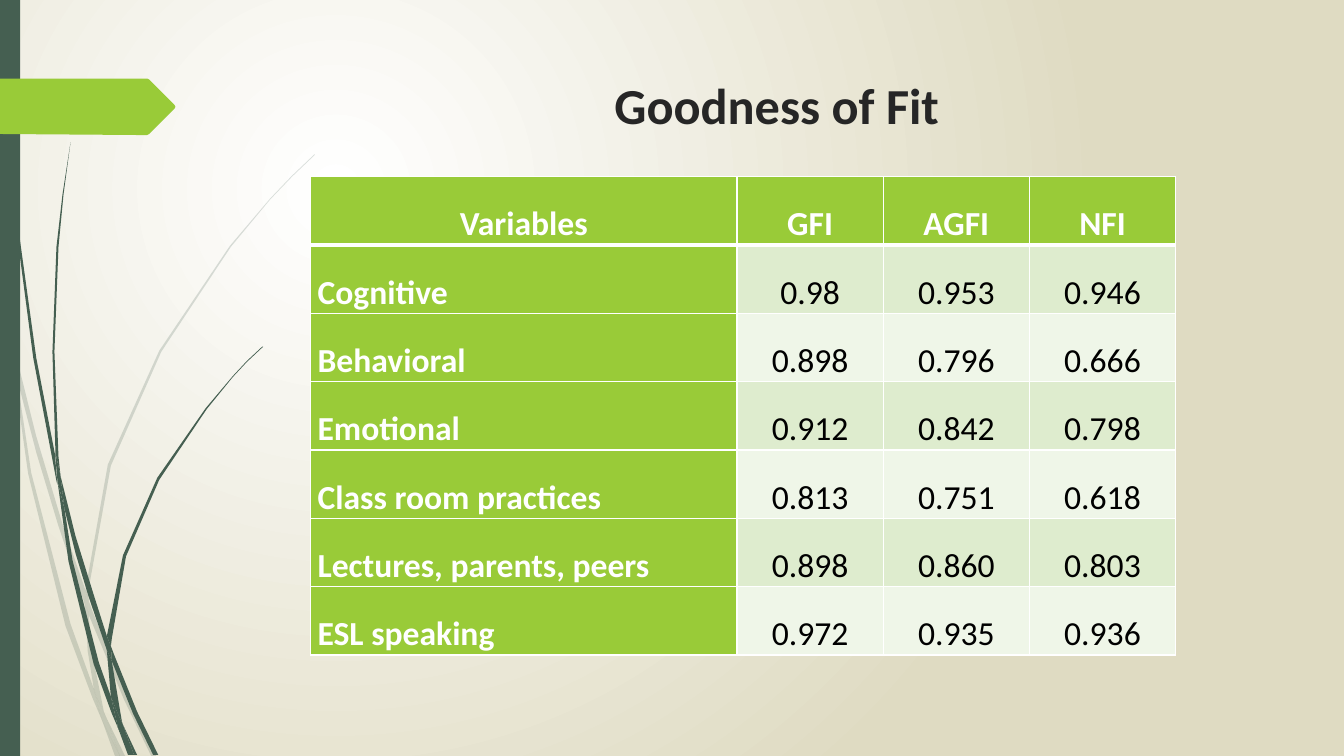
import pptx
import pptx.dml.color
import pptx.enum.shapes
import pptx.enum.text
import pptx.oxml.ns
import pptx.util
from lxml import etree
from pptx.util import Inches

FONT = "Calibri"
GREEN, DARK, WHITE, BLACK = "99CB38", "455F51", "FFFFFF", "000000"
BANDS = ("DEECCE", "EFF6E8")
TITLE = "Goodness of Fit"
HEAD = ("Variables", "GFI", "AGFI", "NFI")
ROWS = [
    ("Cognitive", "0.98", "0.953", "0.946"),
    ("Behavioral", "0.898", "0.796", "0.666"),
    ("Emotional", "0.912", "0.842", "0.798"),
    ("Class room practices", "0.813", "0.751", "0.618"),
    ("Lectures, parents, peers", "0.898", "0.860", "0.803"),
    ("ESL speaking", "0.972", "0.935", "0.936"),
]
WIDTHS = (4.23, 1.45, 1.45, 1.45)
TABLE_H = 4.75

ARROW = [(0, 0.78), (1.46, 0.78), (1.48, 0.79), (1.73, 1.04), (1.74, 1.06),
         (1.73, 1.08), (1.48, 1.33), (1.46, 1.34), (1.36, 1.34), (0, 1.33)]

# Outlines of the blades of grass, in inches
PALE = [
    [(0.58, 5.22), (0.84, 5.99), (0.85, 5.86), (0.62, 5.2), (0.36, 4.33),
     (0.14, 3.45), (0.17, 3.76), (0.36, 4.49)],
    [(0.92, 6.07), (0.88, 5.96), (0.88, 6.1), (1.23, 6.94), (1.5, 7.5),
     (1.55, 7.5), (1.27, 6.92)],
    [(1.19, 7.5), (1.24, 7.5), (1.05, 7.11)],
    [(0.93, 6.83), (0.7, 6.19), (0.31, 4.69), (0.17, 3.76), (0.11, 3.5),
     (0.28, 4.7), (0.65, 6.21), (0.92, 6.93), (1.01, 7.14), (0.99, 7.07)],
    [(0.84, 5.99), (0.87, 6.46), (0.93, 6.83), (0.96, 6.92), (1.05, 7.11),
     (1.03, 7.06), (0.91, 6.46), (0.88, 6.1), (0.88, 6.08)],
    [(0.88, 5.84), (1.1, 4.62), (1.6, 3.49), (2.29, 2.45), (2.68, 1.98),
     (2.9, 1.75), (3.12, 1.54), (3.12, 1.53), (2.89, 1.75), (2.68, 1.97),
     (2.28, 2.44), (1.58, 3.48), (1.07, 4.61), (0.85, 5.84), (0.85, 5.86),
     (0.88, 5.96)],
    [(1.01, 7.14), (1.14, 7.5), (1.19, 7.5)],
    [(0.88, 6.08), (0.88, 6.1), (0.88, 5.96), (0.85, 5.86), (0.84, 5.99)],
    [(0.96, 6.92), (0.93, 6.83), (0.99, 7.07), (1.01, 7.14), (1.19, 7.5),
     (1.05, 7.11)],
]
DEEP = [
    [(0.07, 1.1), (0.17, 2.33), (0.33, 3.55), (0.56, 4.77), (0.57, 4.81),
     (0.55, 4.57), (0.55, 4.53), (0.36, 3.55), (0.19, 2.32), (0.08, 1.09),
     (0.05, 0.48), (0.04, 0), (0.03, 0), (0.04, 0.48)],
    [(0.88, 5.92), (1.06, 6.45), (1.06, 6.31), (0.93, 5.9), (0.75, 5.32),
     (0.6, 4.72), (0.64, 5.05), (0.75, 5.49)],
    [(1.13, 6.49), (1.1, 6.41), (1.11, 6.56), (1.32, 7.08), (1.52, 7.49),
     (1.57, 7.49), (1.36, 7.06)],
    [(1.1, 6.91), (0.98, 6.57), (0.72, 5.56), (0.64, 5.05), (0.57, 4.77),
     (0.68, 5.57), (0.93, 6.59), (1.11, 7.08), (1.17, 7.22), (1.16, 7.17)],
    [(0.6, 4.72), (0.58, 4.53), (0.54, 3.49), (0.58, 2.45), (0.63, 1.93),
     (0.7, 1.41), (0.62, 1.93), (0.56, 2.45), (0.52, 3.49), (0.55, 4.49)],
    [(1.33, 7.49), (1.36, 7.49), (1.22, 7.19)],
    [(0.57, 4.77), (0.64, 5.05), (0.6, 4.72), (0.55, 4.49), (0.55, 4.53)],
    [(1.11, 6.33), (1.25, 5.52), (1.58, 4.76), (2.05, 4.06), (2.31, 3.74),
     (2.45, 3.59), (2.61, 3.44), (2.6, 3.44), (2.45, 3.58), (2.31, 3.73),
     (2.04, 4.05), (1.56, 4.74), (1.22, 5.51), (1.06, 6.31), (1.1, 6.41)],
    [(1.17, 7.22), (1.27, 7.49), (1.31, 7.49)],
    [(1.06, 6.45), (1.1, 6.91), (1.16, 7.06), (1.22, 7.19), (1.21, 7.16),
     (1.11, 6.56), (1.09, 6.51)],
    [(1.06, 6.45), (1.09, 6.51), (1.11, 6.56), (1.1, 6.41), (1.06, 6.31)],
    [(1.16, 7.06), (1.1, 6.91), (1.16, 7.17), (1.17, 7.22), (1.3, 7.49),
     (1.33, 7.49), (1.22, 7.19)],
]

qn = pptx.oxml.ns.qn
ALIGN = pptx.enum.text.PP_ALIGN
ANCHOR = pptx.enum.text.MSO_ANCHOR


def rgb(code):
    return pptx.dml.color.RGBColor.from_string(code)


def paint(shape, color, alpha=None):
    """Fill a shape flat, without line or shadow; alpha is percent opaque."""
    shape.shadow.inherit = False
    shape.fill.solid()
    shape.fill.fore_color.rgb = rgb(color)
    shape.line.fill.background()
    if alpha:
        tint = shape.element.spPr.find(".//" + qn("a:srgbClr"))
        etree.SubElement(tint, qn("a:alpha"), val=str(alpha * 1000))


def outline(shapes, points, color, alpha=None):
    start, *rest = [(Inches(x), Inches(y)) for x, y in points]
    pen = shapes.build_freeform(*start)
    pen.add_line_segments(rest, close=True)
    paint(pen.convert_to_shape(), color, alpha)


def write(frame, text, size=24, color=BLACK, bold=False, align=ALIGN.CENTER,
          space=1.0):
    para = frame.paragraphs[0]
    para.alignment, para.line_spacing = align, space
    run = para.add_run()
    run.text = text
    font = run.font
    font.name, font.size, font.bold = FONT, pptx.util.Pt(size), bold
    font.color.rgb = rgb(color)


def border(cell, **widths):
    """Draw white cell edges; L, R, T and B give widths in points."""
    props = cell._tc.get_or_add_tcPr()
    for i, side in enumerate("LRTB"):
        line = etree.Element(qn("a:ln" + side),
                             w=str(pptx.util.Pt(widths.get(side, 1))))
        fill = etree.SubElement(line, qn("a:solidFill"))
        etree.SubElement(fill, qn("a:srgbClr"), val=WHITE)
        props.insert(i, line)


def backdrop(slide):
    fill = slide.background.fill
    fill.gradient()
    for stop, color in zip(fill.gradient_stops, (WHITE, "DFDBC2")):
        stop.color.rgb = rgb(color)
    grad = slide.element.find(".//" + qn("a:gradFill"))
    grad.remove(grad.find(qn("a:lin")))
    ring = etree.SubElement(grad, qn("a:path"), {"path": "circle"})
    etree.SubElement(ring, qn("a:fillToRect"),
                     l="50000", t="50000", r="100000", b="100000")


def grid(slide):
    data = [HEAD] + ROWS
    table = slide.shapes.add_table(
        len(data), len(HEAD), Inches(3.08), Inches(1.75),
        Inches(sum(WIDTHS)), Inches(TABLE_H)).table
    for col, width in zip(table.columns, WIDTHS):
        col.width = Inches(width)
    for r, row in enumerate(data):
        table.rows[r].height = Inches(TABLE_H / len(data))
        for c, text in enumerate(row):
            cell = table.cell(r, c)
            label = r == 0 or c == 0
            cell.vertical_anchor = ANCHOR.BOTTOM
            cell.margin_left = cell.margin_right = Inches(0.07)
            cell.margin_top = cell.margin_bottom = 0
            cell.fill.solid()
            cell.fill.fore_color.rgb = rgb(GREEN if label else BANDS[(r - 1) % 2])
            border(cell, T=3 if r == 1 else 1, B=3 if r == 0 else 1)
            write(cell.text_frame, text, color=WHITE if label else BLACK,
                  bold=label, space=1.5,
                  align=ALIGN.LEFT if r and c == 0 else ALIGN.CENTER)


def main():
    deck = pptx.Presentation()
    deck.slide_width, deck.slide_height = Inches(13.33), Inches(7.5)
    slide = deck.slides.add_slide(deck.slide_layouts[6])
    shapes = slide.shapes
    backdrop(slide)
    for blades, alpha in ((PALE, 20), (DEEP, None)):
        tuft = shapes.add_group_shape()
        for blade in blades:
            outline(tuft.shapes, blade, DARK, alpha)
    bar = shapes.add_shape(pptx.enum.shapes.MSO_SHAPE.RECTANGLE,
                           0, 0, Inches(0.2), Inches(7.5))
    paint(bar, DARK)
    outline(shapes, ARROW, GREEN)
    box = shapes.add_textbox(Inches(2.83), Inches(0.69), Inches(9.75), Inches(1.4))
    box.text_frame.word_wrap = True
    write(box.text_frame, TITLE, size=36, color="262626", bold=True)
    grid(slide)
    deck.save("out.pptx")


if __name__ == "__main__":
    main()
